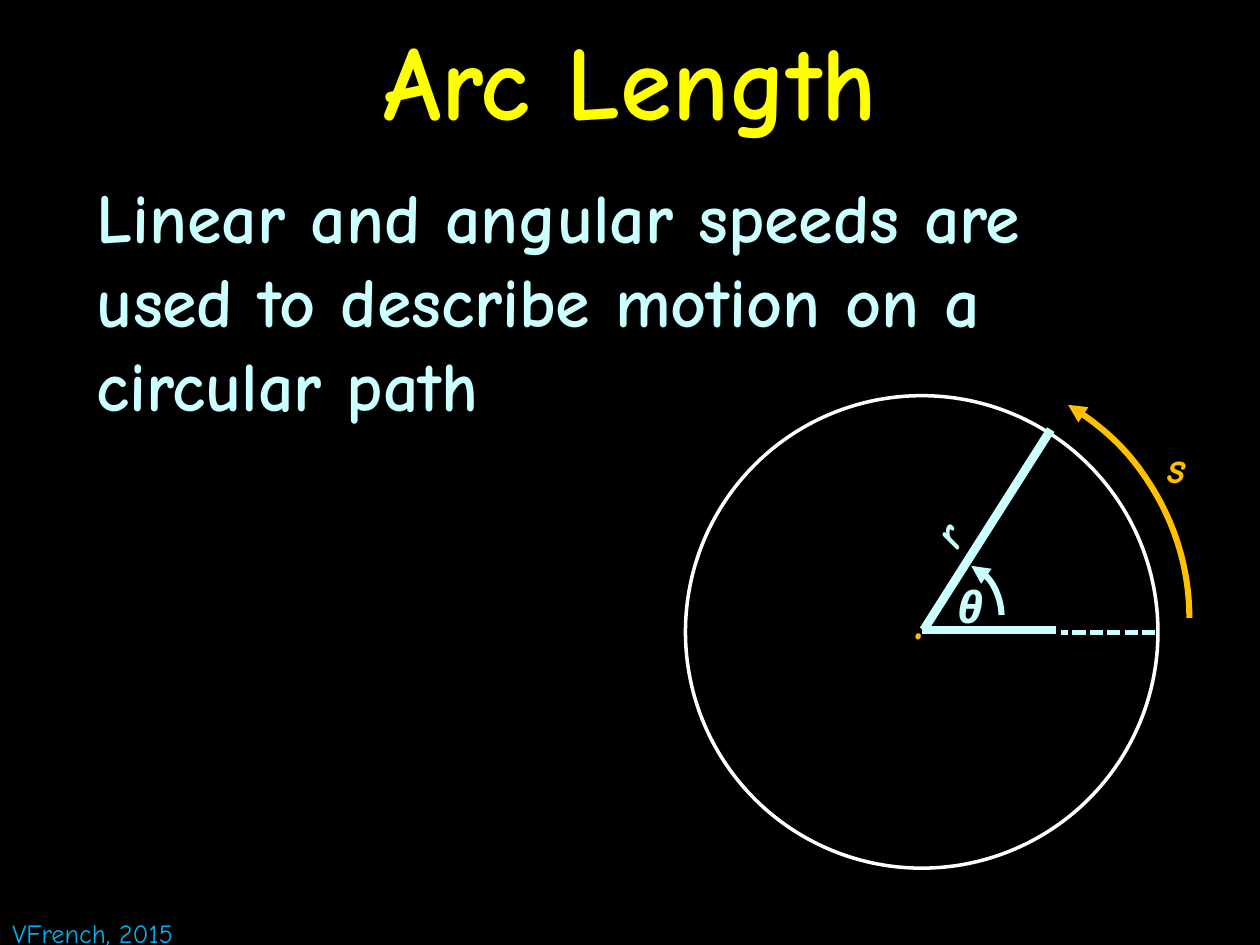
from dataclasses import dataclass

from lxml import etree
from pptx import Presentation
from pptx.dml.color import RGBColor
from pptx.enum.dml import MSO_LINE
from pptx.enum.shapes import MSO_CONNECTOR, MSO_SHAPE
from pptx.enum.text import MSO_ANCHOR, MSO_AUTO_SIZE, PP_ALIGN
from pptx.oxml.ns import qn
from pptx.util import Inches, Pt

ARC, OVAL = MSO_SHAPE.ARC, MSO_SHAPE.OVAL
STRAIGHT = MSO_CONNECTOR.STRAIGHT
DASH = MSO_LINE.SQUARE_DOT
LEFT, CENTER = PP_ALIGN.LEFT, PP_ALIGN.CENTER
TOP, MIDDLE = MSO_ANCHOR.TOP, MSO_ANCHOR.MIDDLE
NO_FIT = MSO_AUTO_SIZE.NONE
ARC_DEGREE = 0.6


@dataclass(frozen=True)
class Theme:
    font: str = "Comic Neue"
    background: str = "000000"
    title: str = "FFFF00"
    main: str = "CCFFFF"
    accent: str = "FFC000"
    circle: str = "FFFFFF"
    credit: str = "00B0F0"
    title_size: int = 60
    body_size: int = 40
    label_size: int = 25
    credit_size: int = 15


class SlideBuilder:
    def __init__(self, prs, theme):
        self.theme = theme
        self.s = prs.slides.add_slide(prs.slide_layouts[5])
        fill = self.s.background.fill
        fill.solid()
        fill.fore_color.rgb = RGBColor.from_string(theme.background)

    def fill_text(self, sp, text, size, color, align=LEFT, anchor=TOP, wrap=True, **style):
        tf = sp.text_frame
        frame = {"word_wrap": wrap, "auto_size": NO_FIT, "vertical_anchor": anchor}
        for name, value in frame.items():
            setattr(tf, name, value)
        p = tf.paragraphs[0]
        p.alignment = align
        r = p.add_run()
        r.text = text
        for name, value in {"name": self.theme.font, "size": Pt(size), **style}.items():
            setattr(r.font, name, value)
        r.font.color.rgb = RGBColor.from_string(color)

    def title(self, text, box):
        sp = self.s.shapes.title
        for name, value in zip(("left", "top", "width", "height"), box):
            setattr(sp, name, Inches(value))
        self.fill_text(sp, text, self.theme.title_size, self.theme.title,
                       CENTER, MIDDLE, bold=True)

    def text(self, text, box, size, color, rotation=0, **style):
        sp = self.s.shapes.add_textbox(*map(Inches, box))
        sp.rotation = rotation
        self.fill_text(sp, text, size, color, **style)

    def label(self, text, box, color, rotation=0):
        self.text(text, box, self.theme.label_size, color, rotation,
                  bold=True, italic=True)

    def stroke(self, sp, color, width):
        sp.line.color.rgb = RGBColor.from_string(color)
        sp.line.width = Pt(width)

    def outline(self, kind, box, color, width):
        sp = self.s.shapes.add_shape(kind, *map(Inches, box))
        sp.shadow.inherit = False
        sp.fill.background()
        self.stroke(sp, color, width)
        return sp

    def arc_arrow(self, box, start, end, color):
        sp = self.outline(ARC, box, color, 3.5)
        for i, angle in enumerate((start, end)):
            sp.adjustments[i] = angle * ARC_DEGREE
        ln = sp.line._get_or_add_ln()
        etree.SubElement(ln, qn("a:headEnd"), type="triangle")

    def line(self, start, end, color, width, dash=None):
        sp = self.s.shapes.add_connector(STRAIGHT, *map(Inches, start + end))
        self.stroke(sp, color, width)
        if dash:
            sp.line.dash_style = dash
        etree.SubElement(sp._element.spPr, qn("a:effectLst"))


def main():
    prs = Presentation()
    prs.slide_width, prs.slide_height = Inches(10), Inches(7.5)
    theme = Theme()
    s = SlideBuilder(prs, theme)

    s.title("Arc Length", (0, 0, 10, 1.25))
    s.text("Linear and angular speeds are used to describe motion on a circular path",
           (0.67, 1.33, 8.75, 6.17), theme.body_size, theme.main, bold=True)

    s.outline(OVAL, (5.44, 3.14, 3.75, 3.75), theme.circle, 2)
    s.text(".", (7.15, 4.47, 0.34, 0.77), theme.body_size, theme.accent, wrap=False)
    s.label("θ", (7.5, 4.55, 0.5, 0.52), theme.main)
    s.arc_arrow((7.25, 4.47, 0.7, 0.86), 285, 357, theme.main)
    s.line((9.17, 5.02), (8.42, 5.02), theme.main, 2.5, DASH)
    s.line((8.38, 5), (7.32, 5), theme.main, 5)
    s.line((8.34, 3.41), (7.33, 5), theme.main, 5)
    s.arc_arrow((5.4, 2.92, 4.04, 3.97), 302, 0, theme.accent)
    s.label("s", (9.17, 3.44, 0.5, 0.52), theme.accent)
    s.label("r", (7.27, 3.82, 0.72, 0.52), theme.main, 302.9)

    s.text("VFrench, 2015", (0, 7.23, 1.69, 0.35), theme.credit_size,
           theme.credit, wrap=False)
    prs.save("out.pptx")


if __name__ == "__main__":
    main()
